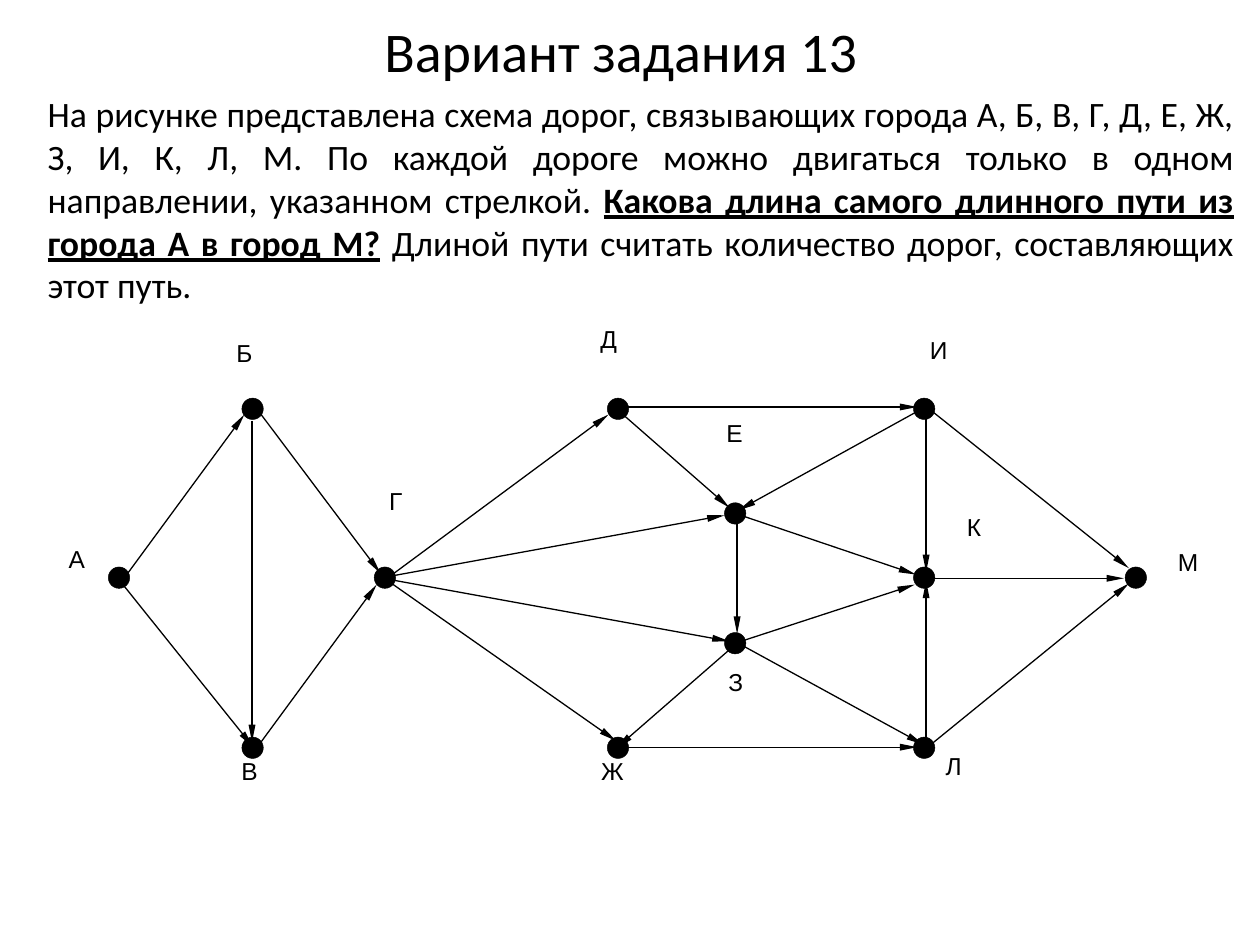
from lxml import etree
from pptx import Presentation
from pptx.dml.color import RGBColor
from pptx.enum.shapes import MSO_CONNECTOR, MSO_SHAPE
from pptx.enum.text import MSO_ANCHOR, PP_ALIGN
from pptx.oxml.ns import qn
from pptx.util import Inches, Pt

STRAIGHT = MSO_CONNECTOR.STRAIGHT
OVAL = MSO_SHAPE.OVAL
TOP, MIDDLE = MSO_ANCHOR.TOP, MSO_ANCHOR.MIDDLE
CENTER, JUSTIFY = PP_ALIGN.CENTER, PP_ALIGN.JUSTIFY

TITLE = "Вариант задания 13"
TASK = [
    ("На рисунке представлена схема дорог, связывающих города А, Б, В, Г, Д, Е, Ж, З, И, К, Л, М. "
     "По каждой дороге можно двигаться только в одном направлении, указанном стрелкой. ", False),
    ("Какова длина самого длинного пути из города А в город М?", True),
    (" Длиной пути считать количество дорог, составляющих этот путь.", False),
]

CITIES = {
    "А": ((0.86, 4.5), (0.32, 4.32)),
    "Б": ((1.92, 3.16), (1.65, 2.68)),
    "В": ((1.92, 5.85), (1.69, 6)),
    "Г": ((2.97, 4.5), (2.85, 3.86)),
    "Д": ((4.82, 3.16), (4.54, 2.57)),
    "Е": ((5.75, 3.99), (5.54, 3.32)),
    "Ж": ((4.82, 5.85), (4.57, 6)),
    "З": ((5.75, 5.02), (5.55, 5.29)),
    "И": ((7.25, 3.16), (7.16, 2.66)),
    "К": ((7.25, 4.5), (7.44, 4.06)),
    "Л": ((7.25, 5.85), (7.28, 5.96)),
    "М": ((8.93, 4.5), (9.14, 4.34)),
}

ROADS = {
    "АБ": (0.97, 4.61, 1.94, 3.29),
    "АВ": (0.92, 4.57, 2.01, 5.93),
    "БВ": (2, 3.34, 2, 5.89),
    "БГ": (2.02, 3.22, 3.02, 4.55),
    "ВГ": (2.02, 5.96, 2.99, 4.64),
    "ГД": (3.1, 4.57, 4.83, 3.29),
    "ГЕ": (3.06, 4.58, 5.75, 4.09),
    "ГЗ": (3.04, 4.59, 5.79, 5.09),
    "ГЖ": (3.05, 4.59, 4.89, 5.88),
    "ДИ": (4.88, 3.23, 7.28, 3.23),
    "ДЕ": (4.91, 3.26, 5.79, 4.03),
    "ИЕ": (7.29, 3.26, 5.86, 4.05),
    "ЕЗ": (5.85, 4.13, 5.85, 5.03),
    "ЕК": (5.82, 4.07, 7.27, 4.56),
    "ЗК": (5.85, 5.1, 7.26, 4.64),
    "ЗЖ": (5.82, 5.13, 4.89, 5.94),
    "ЗЛ": (5.85, 5.1, 7.33, 5.91),
    "ЖЛ": (4.88, 5.93, 7.28, 5.93),
    "ИК": (7.35, 3.29, 7.35, 4.54),
    "ЛК": (7.35, 5.86, 7.35, 4.61),
    "ИМ": (7.38, 3.25, 8.96, 4.51),
    "КМ": (7.41, 4.59, 8.92, 4.59),
    "ЛМ": (7.35, 5.94, 8.96, 4.63),
}


def rgb(value):
    """Return the colour for a hex string."""
    return RGBColor.from_string(value)


class Sketch:
    """Holds the style and the current slide."""

    INK = "000000"
    TEXT_FONT, LABEL_FONT = "Calibri", "Arial"
    DOT = 0.17
    LABEL = (0.58, 0.48)

    def __init__(self, s):
        """Keep the slide to draw on."""
        self.s = s

    def text(self, box, runs, size, font, align=CENTER, anchor=TOP, inset=None, before=0):
        """Add a one-paragraph text box of (text, emphasised) runs."""
        sp = self.s.shapes.add_textbox(*map(Inches, box))
        tf = sp.text_frame
        tf.word_wrap = True
        tf.vertical_anchor = anchor
        if inset is not None:
            tf.margin_left = tf.margin_top = tf.margin_right = tf.margin_bottom = Inches(inset)
        p = tf.paragraphs[0]
        p.alignment = align
        p.space_before = Pt(before)
        for text, strong in runs:
            r = p.add_run()
            r.text = text
            r.font.name = font
            r.font.size = Pt(size)
            r.font.bold = r.font.underline = strong
            r.font.color.rgb = rgb(self.INK)

    def dot(self, x, y):
        """Add a city dot."""
        sp = self.s.shapes.add_shape(OVAL, *map(Inches, (x, y, self.DOT, self.DOT)))
        sp.shadow.inherit = False
        sp.fill.solid()
        sp.fill.fore_color.rgb = rgb(self.INK)
        sp.line.color.rgb = rgb(self.INK)
        sp.line.width = Pt(0.25)

    def label(self, name, x, y):
        """Add a city letter."""
        self.text((x, y, *self.LABEL), [(name, False)], 14, self.LABEL_FONT, inset=0)

    def road(self, ends):
        """Add a one-way road with an arrowhead at its end."""
        cxn = self.s.shapes.add_connector(STRAIGHT, *map(Inches, ends))
        cxn.line.color.rgb = rgb(self.INK)
        cxn.line.width = Pt(0.75)
        ln = cxn.line._get_or_add_ln()
        etree.SubElement(ln, qn("a:tailEnd"), type="triangle", w="sm", len="lg")
        etree.SubElement(cxn._element.spPr, qn("a:effectLst"))


def main():
    """Build and save the slide."""
    prs = Presentation()
    prs.slide_width, prs.slide_height = Inches(10), Inches(7.5)
    sketch = Sketch(prs.slides.add_slide(prs.slide_layouts[6]))
    sketch.text((0.43, 0.13, 9, 0.54), [(TITLE, False)], 32, sketch.TEXT_FONT, anchor=MIDDLE)
    sketch.text((0.28, 0.68, 9.61, 1.5), TASK, 20.4, sketch.TEXT_FONT, JUSTIFY, before=4)
    for name, (dot, label) in CITIES.items():
        sketch.dot(*dot)
        sketch.label(name, *label)
    for ends in ROADS.values():
        sketch.road(ends)
    prs.save("out.pptx")


if __name__ == "__main__":
    main()
